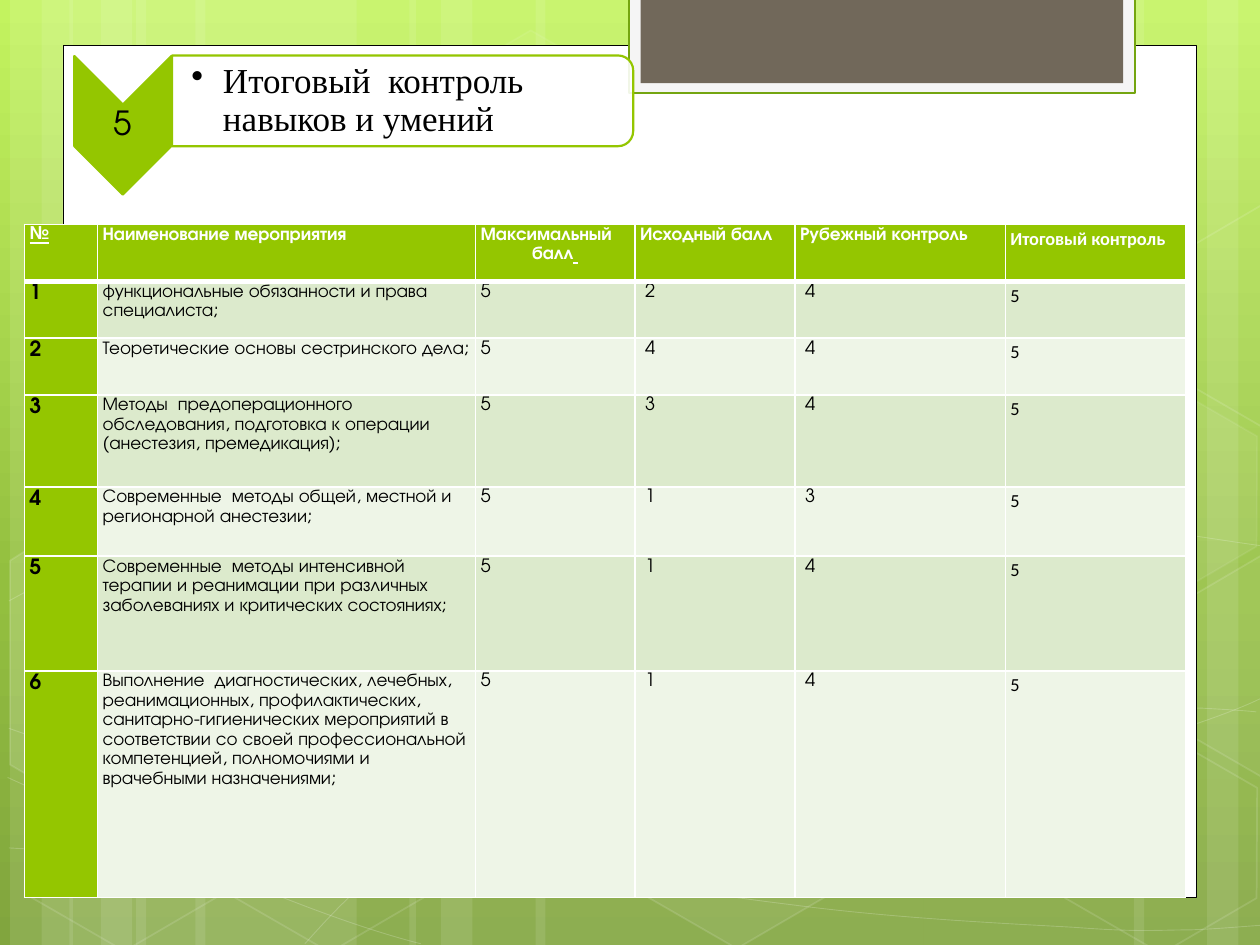
from copy import deepcopy
from dataclasses import dataclass
from typing import NamedTuple, Optional

from lxml.etree import SubElement
from pptx import Presentation
from pptx.dml.color import RGBColor
from pptx.enum.shapes import MSO_SHAPE as Kind
from pptx.enum.text import MSO_ANCHOR as Anchor, MSO_AUTO_SIZE as Fit, PP_ALIGN as Align
from pptx.oxml.ns import qn
from pptx.util import Emu, Inches, Pt

WHITE, BLACK = RGBColor(255, 255, 255), RGBColor(0, 0, 0)
GREEN, EDGE = RGBColor(0x94, 0xC6, 0x00), RGBColor(0x74, 0xA5, 0x10)
SMOKE, BROWN = RGBColor(0xF5, 0xF5, 0xF5), RGBColor(0x71, 0x68, 0x5A)
ODD, EVEN = RGBColor(0xDC, 0xEA, 0xCC), RGBColor(0xEE, 0xF5, 0xE7)
SKY = [(0, RGBColor(0xC3, 0xF3, 0x5F)), (0.62, RGBColor(0x93, 0xBF, 0x3F)),
       (1, RGBColor(0x81, 0xA5, 0x3E))]
SANS, SERIF, PLAIN = "TeX Gyre Adventor", "Times New Roman", "Calibri"
COLS, ROWS = 100, 75  # the slide grid
UNIT = Inches(0.1)


class Box(NamedTuple):
    col: float
    row: float
    cols: float
    rows: float


@dataclass
class Paint:
    fill: Optional[RGBColor] = None
    alpha: int = 100
    line: Optional[RGBColor] = None
    width: float = 1
    fade: int = 100


# left column and width of the pale stripes
BANDS = [(10.8, 17.5), (0.8, 5), (3.3, 8.3), (15.5, 17.5), (5.5, 5), (8, 8.3),
         (73.3, 17.5), (95.8, 5), (90, 8.3), (42.5, 30.8), (32.5, 5), (35, 8.3)]
# a start point, then three Bezier points for each stretch
WAVES = [
    [(.7, 67.3), (6.1, 67.6), (11.5, 67.9), (19, 67.8), (26.5, 67.7), (35.8, 67.5),
     (45.8, 66.5), (55.8, 65.5), (70, 63.6), (79.2, 61.7), (88.3, 59.8), (97.7, 56.8),
     (100.7, 55.1)],
    [(.7, 47.7), (3.6, 46.1), (6.5, 44.6), (12.1, 43.1), (17.8, 41.6), (25.9, 39.4),
     (34.7, 38.7), (43.6, 38), (54.4, 37.9), (65.4, 38.7), (76.4, 39.5), (94.7, 42.6),
     (100.7, 43.4)],
    [(.6, 61.7), (12.7, 67.2), (24.7, 72.7), (33.4, 74.9)],
    [(.7, 57.8), (3.8, 58.9), (7, 60), (12.8, 61.6), (18.6, 63.1), (27.3, 65.6),
     (35.7, 67.3), (44, 69), (54.5, 70.8), (62.8, 71.8), (71.1, 72.9), (80, 73.3),
     (85.3, 73.6), (90.5, 74), (91.9, 73.8), (94.5, 73.8), (97.1, 73.7), (98.9, 73.5),
     (100.7, 73.4)],
    [(24.2, 74.9), (26, 72.9), (27.8, 70.9), (30.2, 69.1), (32.6, 67.3), (36, 65.3),
     (38.8, 63.9), (41.6, 62.5), (43.3, 61.9), (47, 60.9), (50.6, 59.9), (57.3, 58.5),
     (60.8, 57.8), (64.4, 57.1), (64.9, 57.1), (68, 56.9), (71.1, 56.6), (76, 56.3),
     (79.4, 56.2), (82.9, 56.1), (88.6, 56.2), (88.6, 56.2), (90.8, 56.2), (93.1, 56.2),
     (95.3, 56.2), (97.1, 56.3), (98.8, 56.4), (99.7, 56.5), (100.3, 56.5), (100.6, 56.6),
     ][:28],
]
# column, row, fill opacity, line opacity
HEXES = [(33.4, 3.6, 4, 8), (49.7, 58.9, 6, 12), (1.1, 59.1, 0, 12), (1.4, 31.2, 7, 8),
         (17.4, 59.2, 0, 12), (75.3, 45.3, 10, 12), (83.4, 59.3, 0, 12), (83.4, 31.4, 7, 8)]
# cut hexagons at the slide's edges, with their fill opacity
CUTS = [
    ([(.8, 44.5), (1.9, 43.8), (9.6, 48.2), (9.5, 57), (2, 61.4), (.8, 60.7)], 10),
    ([(92.6, 48.5), (100.1, 44.1), (100.9, 44.6), (100.9, 61.3), (100.2, 61.7),
      (92.6, 57.3)], 4),
    ([(92.6, 20.7), (100.1, 16.3), (101, 16.8), (100.9, 33.5), (100.2, 33.9),
      (92.6, 29.5)], 0),
]
HEAD = ["№", "Наименование мероприятия", "Максимальный\nбалл", "Исходный балл",
        "Рубежный контроль", "Итоговый контроль"]
TASKS = [
    ("функциональные обязанности и права специалиста;", 5, 2, 4, 5),
    ("Теоретические основы сестринского дела;", 5, 4, 4, 5),
    ("Методы  предоперационного обследования, подготовка к операции "
     "(анестезия, премедикация);", 5, 3, 4, 5),
    ("Современные  методы общей, местной и регионарной анестезии;", 5, 1, 3, 5),
    ("Современные  методы интенсивной терапии и реанимации при различных "
     "заболеваниях и критических состояниях;", 5, 1, 4, 5),
    ("Выполнение  диагностических, лечебных, реанимационных, профилактических, "
     "санитарно-гигиенических мероприятий в соответствии со своей профессиональной "
     "компетенцией, полномочиями и врачебными назначениями;", 5, 1, 4, 5),
]
WIDTHS = [5.8, 30, 12.65, 12.7, 16.7, 14.3]
HEIGHTS = [4.54, 4.5, 4.5, 7.3, 5.5, 9.1, 18]


def span(n: float) -> Emu:
    return Emu(round(n * UNIT))


def dim(part, share: int) -> None:
    """Set the opacity, in percent, of the solid fill inside part."""
    tone = part.find(f"{qn('a:solidFill')}/{qn('a:srgbClr')}")
    SubElement(tone, qn("a:alpha"), val=str(share * 1000))


def coat(shape, paint: Paint) -> None:
    shape.shadow.inherit = False
    props = shape.element.spPr
    if paint.fill is None:
        shape.fill.background()
    else:
        shape.fill.solid()
        shape.fill.fore_color.rgb = paint.fill
        if paint.alpha < 100:
            dim(props, paint.alpha)
    if paint.line is None:
        shape.line.fill.background()
    else:
        shape.line.color.rgb = paint.line
        shape.line.width = Pt(paint.width)
        if paint.fade < 100:
            dim(props.find(qn("a:ln")), paint.fade)


def draw(slide, kind: Kind, box: Box, paint: Paint, turn: float = 0):
    shape = slide.shapes.add_shape(kind, *map(span, box))
    shape.rotation = turn
    coat(shape, paint)
    return shape


def trace(slide, points: list, paint: Paint, close: bool):
    spots = [(span(x), span(y)) for x, y in points]
    pen = slide.shapes.build_freeform(*spots[0])
    pen.add_line_segments(spots[1:], close=close)
    shape = pen.convert_to_shape()
    coat(shape, paint)
    return shape


def bend(shape) -> None:
    """Turn each three straight stretches of an outline into one Bezier curve."""
    track = shape.element.find(f".//{qn('a:path')}")
    lines = track.findall(qn("a:lnTo"))
    for i in range(0, len(lines), 3):
        curve = SubElement(track, qn("a:cubicBezTo"))
        for line in lines[i:i + 3]:
            curve.append(line[0])
            track.remove(line)


def label(shape, box: Box, text: str, font: str, size: float, pad: float, align: Align):
    shape.left, shape.top, shape.width, shape.height = map(span, box)
    frame = shape.text_frame
    frame.text = text
    frame.word_wrap, frame.auto_size = True, Fit.NONE
    frame.vertical_anchor = Anchor.MIDDLE
    frame.margin_left = span(pad)
    frame.margin_right = frame.margin_top = frame.margin_bottom = span(0.1)
    para = frame.paragraphs[0]
    para.alignment, para.line_spacing = align, 0.9
    ink(para, font, size, BLACK)
    return para


def ink(para, font: str, size: float, color: RGBColor, bold: bool = False) -> None:
    for run in para.runs:
        run.font.name, run.font.size, run.font.bold = font, Pt(size), bold
        run.font.color.rgb = color


def sky(slide) -> None:
    fill = slide.background.fill
    fill.gradient()
    fill.gradient_angle = 270
    stops = slide.element.find(f".//{qn('a:gsLst')}")
    stops.append(deepcopy(stops[0]))
    for stop, (place, color) in zip(fill.gradient_stops, SKY):
        stop.position, stop.color.rgb = place, color


def rule(cell, row: int) -> None:
    """White cell borders, thick below the header."""
    wide = {"lnT": 3 if row == 1 else 1, "lnB": 3 if row == 0 else 1}
    props = cell._tc.get_or_add_tcPr()
    for i, side in enumerate(("lnL", "lnR", "lnT", "lnB")):
        line = SubElement(props, qn(f"a:{side}"), w=str(Pt(wide.get(side, 1))))
        SubElement(SubElement(line, qn("a:solidFill")), qn("a:srgbClr"), val=str(WHITE))
        props.insert(i, line)


def fill_cell(cell, row: int, col: int, text: str) -> None:
    head, first = row == 0, col == 0
    cell.fill.solid()
    cell.fill.fore_color.rgb = GREEN if head or first else ODD if row % 2 else EVEN
    rule(cell, row)
    cell.margin_left = span(0.8 if not head and col in (3, 4) else 0.4)
    cell.margin_right, cell.margin_top, cell.margin_bottom = span(0.4), 0, 0
    cell.text_frame.text = text
    size = (10 if head else 12) if first else 10.5
    for para in cell.text_frame.paragraphs:
        para.line_spacing = 1.15
        ink(para, PLAIN if col == 5 else SANS, size, WHITE if head else BLACK, head or first)


def score(slide) -> None:
    box = Box(1.95, 17.8, sum(WIDTHS), sum(HEIGHTS))
    table = slide.shapes.add_table(len(HEIGHTS), len(WIDTHS), *map(span, box)).table
    table.horz_banding = False
    for col, width in zip(table.columns, WIDTHS):
        col.width = span(width)
    for line, height in zip(table.rows, HEIGHTS):
        line.height = span(height)
    lines = [HEAD] + [(n, *task) for n, task in enumerate(TASKS, 1)]
    for r, line in enumerate(lines):
        for c, text in enumerate(line):
            fill_cell(table.cell(r, c), r, c, str(text))
    table.cell(0, 0).text_frame.paragraphs[0].runs[0].font.underline = True
    para = table.cell(0, 2).text_frame.paragraphs[1]
    para.alignment = Align.CENTER
    tail = para.add_run()
    tail.text, tail.font.underline = " ", True
    ink(para, SANS, 10.5, WHITE, True)


def main() -> None:
    deck = Presentation()
    deck.slide_width, deck.slide_height = span(COLS), span(ROWS)
    slide = deck.slides.add_slide(deck.slide_layouts[5])
    sky(slide)
    for left, width in BANDS:
        draw(slide, Kind.RECTANGLE, Box(left, 0, width, ROWS), Paint(WHITE, 10))
    for wave in WAVES:
        bend(trace(slide, wave, Paint(line=WHITE, width=0.5, fade=20), False))
    for col, row, alpha, fade in HEXES:
        paint = Paint(WHITE if alpha else None, alpha, WHITE, 1, fade)
        draw(slide, Kind.HEXAGON, Box(col, row, 17.5, 15.2), paint, 30).adjustments[0] = 0.285
    for points, alpha in CUTS:
        trace(slide, points, Paint(WHITE if alpha else None, alpha, WHITE, 1, 12), True)

    draw(slide, Kind.RECTANGLE, Box(5, 3.6, 90, 67.65), Paint(WHITE, line=BLACK, width=0.5))
    draw(slide, Kind.RECTANGLE, Box(49.9, -0.2, 40.2, 7.6), Paint(SMOKE, line=EDGE, width=1.25))
    draw(slide, Kind.RECTANGLE, Box(50.85, -0.2, 38.3, 6.8), Paint(BROWN))
    draw(slide, Kind.CHEVRON, Box(4.25, 6.1, 11, 7.7), Paint(GREEN, line=GREEN, width=1.25), 90)
    label(slide.shapes.add_textbox(0, 0, UNIT, UNIT), Box(5.9, 8.23, 7.7, 3.3), "5",
          SANS, 19, 0.1, Align.CENTER)
    plate = draw(slide, Kind.ROUND_2_SAME_RECTANGLE, Box(28.35, -10.3, 7.2, 36.6),
                 Paint(WHITE, 90, GREEN, 1.25), 90)
    title = slide.shapes.title
    plate.element.addnext(title.element)
    para = label(title, Box(13.6, 4.8, 36.3, 6.5), "Итоговый  контроль навыков и умений",
                 SERIF, 20, 1.6, Align.LEFT)
    props = para._p.get_or_add_pPr()
    props.set("marL", str(span(2.5)))
    props.set("indent", str(-span(2.5)))
    SubElement(props, qn("a:buChar"), char="•")
    score(slide)
    deck.save("out.pptx")


if __name__ == "__main__":
    main()
